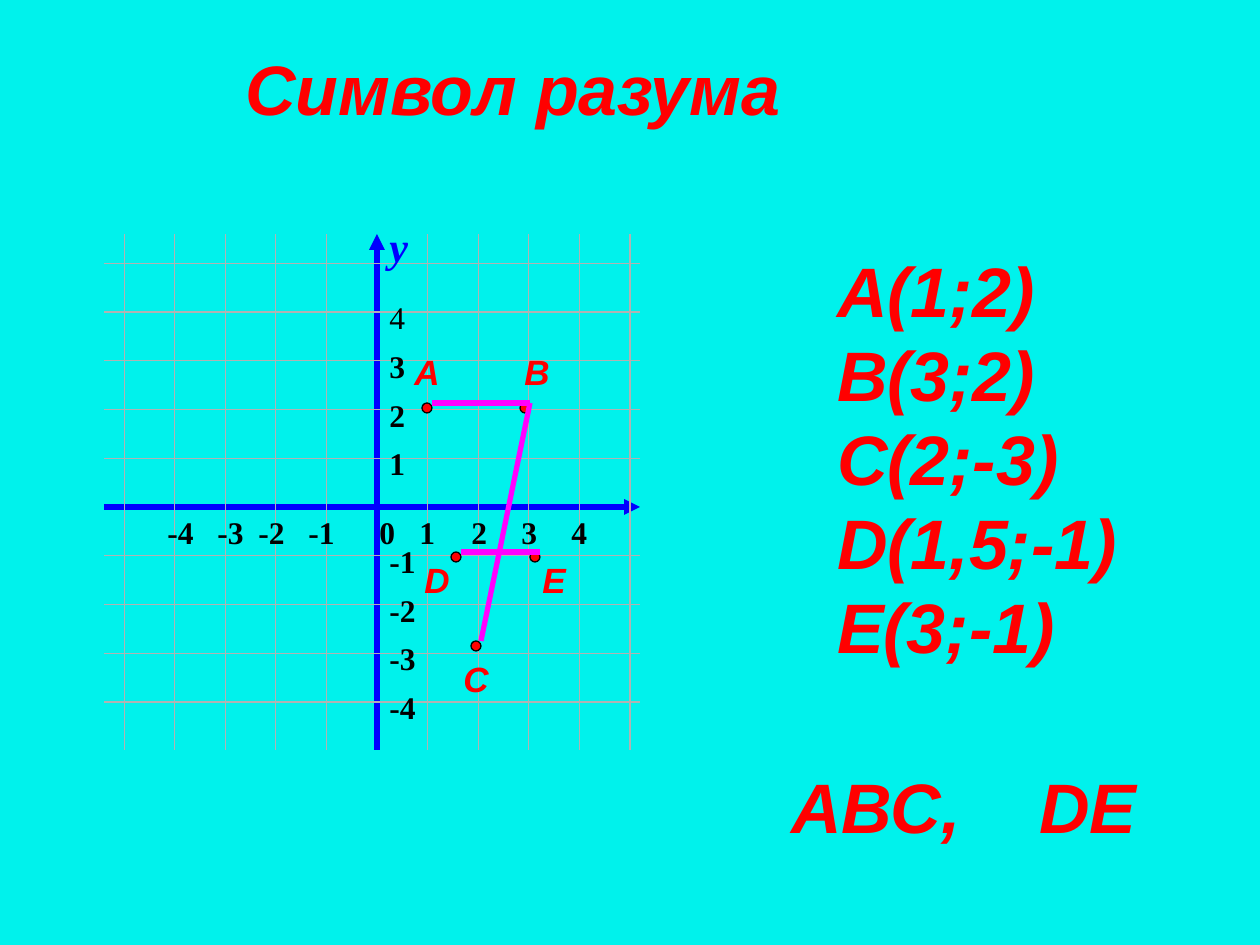
from lxml import etree
from pptx import Presentation
from pptx.dml.color import RGBColor
from pptx.enum.shapes import MSO_CONNECTOR, MSO_SHAPE
from pptx.enum.text import MSO_ANCHOR, PP_ALIGN
from pptx.oxml.ns import qn
from pptx.util import Emu, Pt

STRAIGHT = MSO_CONNECTOR.STRAIGHT
OVAL = MSO_SHAPE.OVAL
MIDDLE = MSO_ANCHOR.MIDDLE
LEFT = PP_ALIGN.LEFT

CYAN = RGBColor(0x00, 0xF2, 0xEC)
RED = RGBColor(0xFF, 0x00, 0x00)
BLUE = RGBColor(0x00, 0x00, 0xFF)
BLACK = RGBColor(0x00, 0x00, 0x00)
GREY = RGBColor(0xB2, 0xB2, 0xB2)
MAGENTA = RGBColor(0xFF, 0x00, 0xFF)
SANS, SERIF = "Arial", "Times New Roman"

HEADING = "Символ разума"
COORDINATES = ["А(1;2)", "В(3;2)", "С(2;-3)", "D(1,5;-1)", "Е(3;-1)"]
PATHS = "АВС,\tDE"
PATHS_TAB = 248

GRID_LEFT, GRID_RIGHT, GRID_TOP, GRID_BOTTOM = 104, 640, 234, 750
ORIGIN_X, ORIGIN_Y = 377, 507
STEP_X, STEP_Y = 50.6, 48.75
X_LABELS = {1: 407, 2: 459, 3: 509, 4: 559, -1: 296, -2: 246, -3: 205, -4: 155, 0: 367}
Y_LABELS = [1, 2, 3, 4, -1, -2, -3, -4]

DOT = 10
POINTS = {"А": (422, 403), "С": (471, 641), "В": (520, 403), "D": (451, 552), "Е": (530, 552)}
POINT_LABELS = {"А": (402, 344), "В": (512, 344), "С": (451, 651), "Е": (530, 552), "D": (412, 552)}
SEGMENTS = ["АВ", "ВС", "DЕ"]


def px(value):
    return Emu(round(value * 914400 / 126))


def style(para, size, color, face, bold=True, italic=True):
    font = para.font
    font.size, font.name, font.bold, font.italic = Pt(size), face, bold, italic
    font.color.rgb = color


def add_text(shapes, text, left, top, width, height, size, color, face,
             bold=True, italic=True, wrap=False, tab=None):
    box = shapes.add_textbox(px(left), px(top), px(width), px(height))
    box.text_frame.word_wrap = wrap
    para = box.text_frame.paragraphs[0]
    para.text = text
    if tab:
        stops = etree.SubElement(para._p.get_or_add_pPr(), qn("a:tabLst"))
        etree.SubElement(stops, qn("a:tab"), pos=str(px(tab)), algn="l")
    style(para, size, color, face, bold, italic)


def add_line(shapes, start, end, color, width, arrow=False):
    line = shapes.add_connector(STRAIGHT, *map(px, start + end))
    line.line.color.rgb = color
    line.line.width = Pt(width)
    if arrow:
        etree.SubElement(line.line._get_or_add_ln(), qn("a:tailEnd"), type="triangle")
    etree.SubElement(line._element.spPr, qn("a:effectLst"))


def add_coordinates(page):
    title = page.shapes.title
    title.left, title.top, title.width, title.height = map(px, (630, 195, 577, 525))
    frame = title.text_frame
    frame.word_wrap = True
    frame.vertical_anchor = MIDDLE
    frame.margin_left = px(207)
    para = frame.paragraphs[0]
    para.text = "\v".join(COORDINATES)
    para.alignment = LEFT
    para.line_spacing = Pt(48)
    style(para, 40, RED, SANS)


def add_plane(shapes):
    add_line(shapes, (GRID_LEFT, ORIGIN_Y), (GRID_RIGHT, ORIGIN_Y), BLUE, 3, True)
    add_line(shapes, (ORIGIN_X, GRID_BOTTOM), (ORIGIN_X, GRID_TOP), BLUE, 3, True)
    for step in [-4, -3, -2, -1, 1, 2, 3, 4, 5]:
        y = ORIGIN_Y - step * STEP_Y
        add_line(shapes, (GRID_LEFT, y), (GRID_RIGHT, y), GREY, 0.75)
    for step in [-5, -4, -3, -2, -1, 1, 2, 3, 4, 5]:
        x = ORIGIN_X + step * STEP_X
        add_line(shapes, (x, GRID_BOTTOM), (x, GRID_TOP), GREY, 0.5 if step == -5 else 0.75)
    add_text(shapes, "y", ORIGIN_X, 214, 71, 63, 24, BLUE, SERIF, wrap=True)
    places = [(value, left, ORIGIN_Y, True) for value, left in X_LABELS.items()]
    places += [(value, ORIGIN_X, ORIGIN_Y - value * STEP_Y - 20, value != 4) for value in Y_LABELS]
    for value, left, top, bold in places:
        width = 52 if value < 0 else 41
        add_text(shapes, str(value), left, top, width, 50, 18, BLACK, SERIF, bold, False)


def add_figure(shapes):
    for left, top in POINTS.values():
        dot = shapes.add_shape(OVAL, px(left), px(top), px(DOT), px(DOT))
        dot.shadow.inherit = False
        dot.fill.solid()
        dot.fill.fore_color.rgb = RED
        dot.line.color.rgb = BLACK
        dot.line.width = Pt(0.75)
    for name, (left, top) in POINT_LABELS.items():
        add_text(shapes, name, left, top, 50, 54, 20, RED, SANS)
    for names in SEGMENTS:
        start, end = [(POINTS[name][0] + DOT, POINTS[name][1]) for name in names]
        add_line(shapes, start, end, MAGENTA, 3)


def main():
    deck = Presentation()
    deck.slide_width, deck.slide_height = px(1260), px(945)
    page = deck.slides.add_slide(deck.slide_layouts[5])
    page.background.fill.solid()
    page.background.fill.fore_color.rgb = CYAN
    add_coordinates(page)
    add_plane(page.shapes.add_group_shape().shapes)
    add_text(page.shapes, HEADING, 233, 39, 566, 97, 40, RED, SANS)
    add_text(page.shapes, PATHS, 779, 757, 372, 97, 40, RED, SANS, tab=PATHS_TAB)
    add_figure(page.shapes.add_group_shape().shapes)
    deck.save("out.pptx")


if __name__ == "__main__":
    main()
